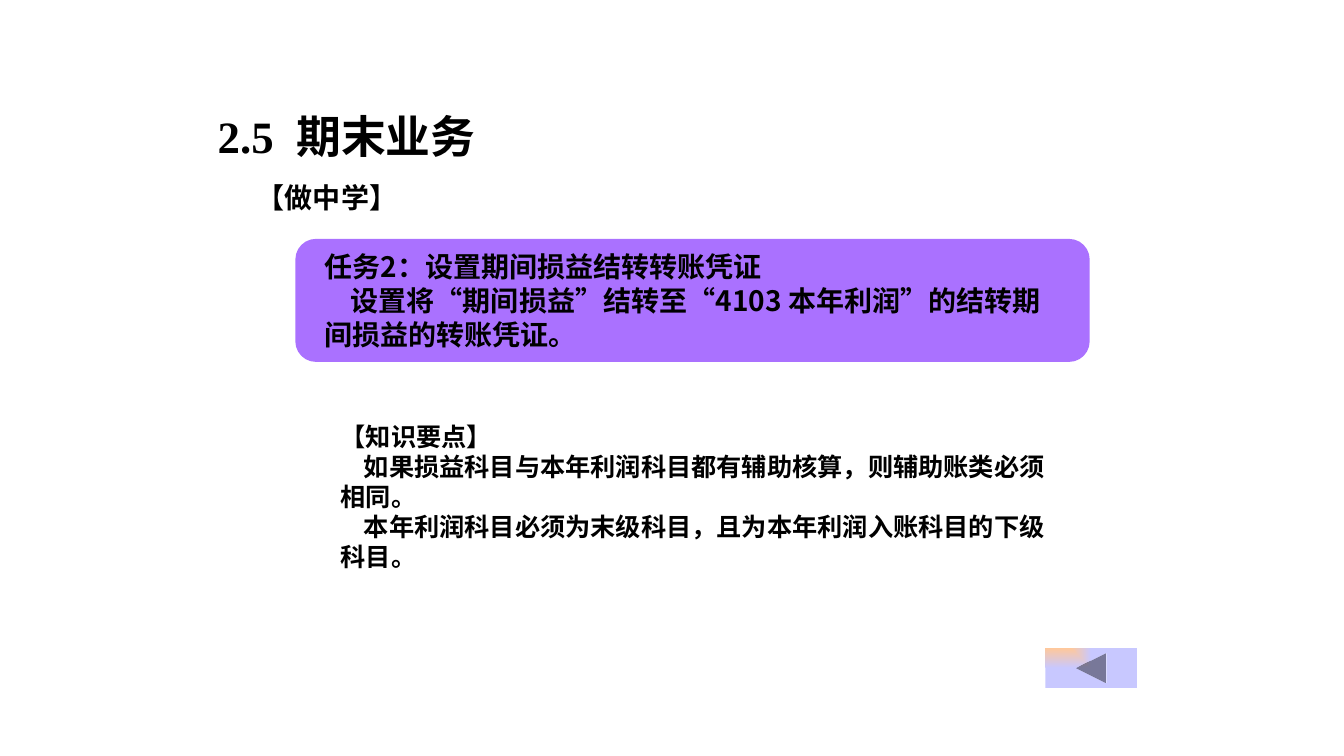
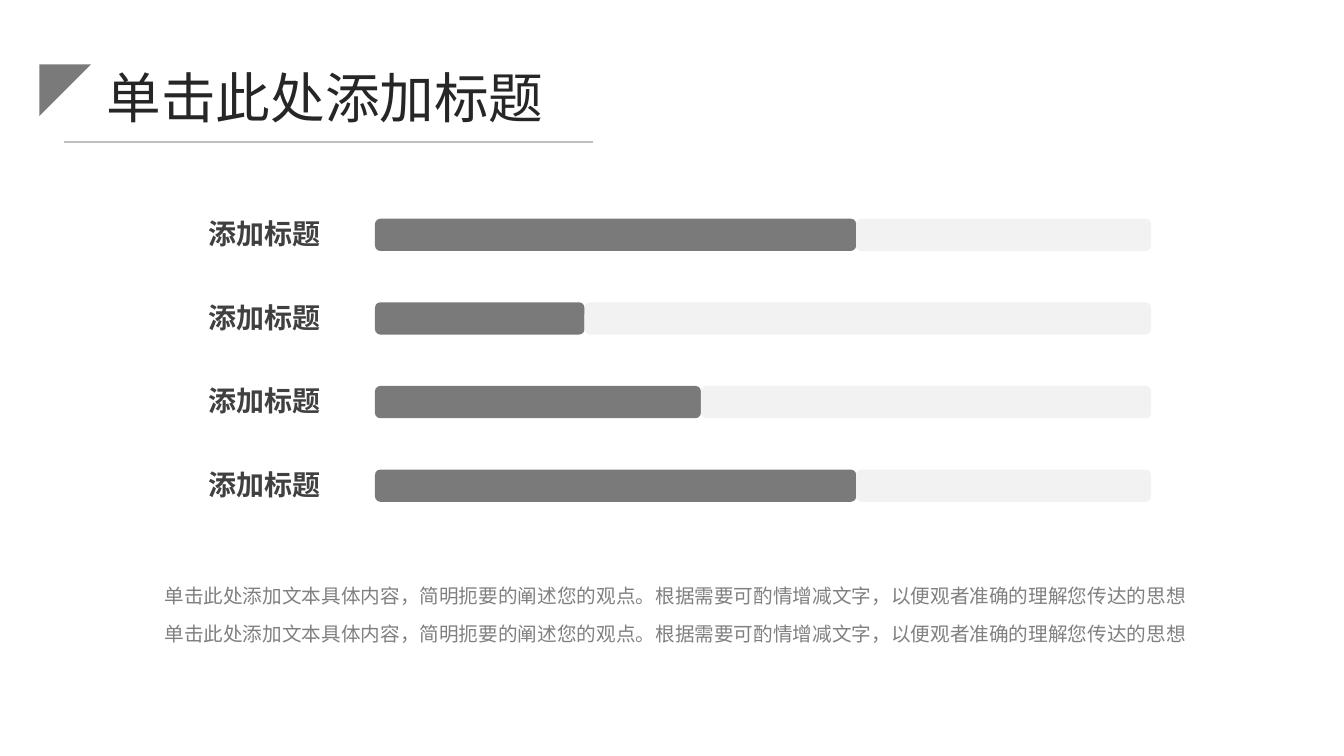
from lxml import etree
from pptx import Presentation
from pptx.dml.color import RGBColor
from pptx.enum.shapes import MSO_CONNECTOR, MSO_SHAPE
from pptx.enum.text import MSO_ANCHOR, MSO_AUTO_SIZE, PP_ALIGN
from pptx.oxml.ns import qn
from pptx.util import Inches, Pt

BLACK = RGBColor(0x00, 0x00, 0x00)
INK = RGBColor(0x26, 0x26, 0x26)
DARK = RGBColor(0x40, 0x40, 0x40)
GRAY = RGBColor(0x80, 0x80, 0x80)
STEEL = RGBColor(0x7A, 0x7A, 0x7A)
SILVER = RGBColor(0xBF, 0xBF, 0xBF)
PALE = RGBColor(0xF2, 0xF2, 0xF2)
PURPLE = RGBColor(0xAA, 0x71, 0xFF)
PEACH = RGBColor(0xFF, 0xC8, 0x9B)
LILAC = RGBColor(0xC8, 0xC8, 0xFF)
SANS = "Noto Sans CJK SC"
SERIF = "Times New Roman"

deck = Presentation()
deck.slide_width, deck.slide_height = Inches(13.33), Inches(7.5)
COL, ROW = deck.slide_width / 100, deck.slide_height / 100
layout = deck.slide_layouts[1]


def write(shape, box, lines, size, color, bold=False, font=SANS,
          align=PP_ALIGN.LEFT, anchor=MSO_ANCHOR.MIDDLE, pitch=None, indent=0):
    """Place a shape on the grid and fill it; lines after the first are indented."""
    left, top, width, height = box
    shape.left, shape.width = int(left * COL), int(width * COL)
    shape.top, shape.height = int(top * ROW), int(height * ROW)
    frame = shape.text_frame
    frame.word_wrap = True
    frame.auto_size = MSO_AUTO_SIZE.NONE
    frame.vertical_anchor = anchor
    frame.text = "\n".join(lines)
    for i, para in enumerate(frame.paragraphs):
        para.alignment = align
        para.space_before = para.space_after = Pt(0)
        if pitch:
            para.line_spacing = Pt(pitch)
        para.font.size, para.font.bold = Pt(size), bold
        para.font.name, para.font.color.rgb = font, color
        props = para._p.get_or_add_pPr()
        props.set("marL", "0")
        props.set("indent", str(Inches(indent) if i else 0))
        mark = etree.Element(qn("a:buNone"))
        base = props.find(qn("a:defRPr"))
        base.addprevious(mark)
        latin = base.find(qn("a:latin"))
        latin.addnext(etree.Element(qn("a:ea"), typeface=SANS))


def block(slide, kind, box, color):
    """Add a flat shape on the grid."""
    left, top, width, height = box
    shape = slide.shapes.add_shape(kind, int(left * COL), int(top * ROW),
                                   int(width * COL), int(height * ROW))
    shape.shadow.inherit = False
    shape.fill.solid()
    shape.fill.fore_color.rgb = color
    shape.line.fill.background()
    return shape


# Task slide
task = deck.slides.add_slide(layout)
write(task.shapes.title, (15.45, 13.73, 66.75, 8.53), ["2.5  期末业务"],
      32, BLACK, True, SERIF)
label = task.shapes.add_textbox(0, 0, 0, 0)
write(label, (18.38, 23.2, 14, 5.87), ["【做中学】"], 20, BLACK, True, SERIF)

box = (21.98, 31.6, 59.1, 16.27)
card = block(task, MSO_SHAPE.ROUNDED_RECTANGLE, box, PURPLE)
write(card, box,
      ["任务2：设置期间损益结转转账凭证",
       "设置将“期间损益”结转至“4103 本年利润”的结转期间损益的转账凭证。"],
      20, BLACK, True, pitch=24, indent=0.26)
card.text_frame.margin_left = Inches(0.23)
card.text_frame.margin_right = Inches(0.29)

write(task.placeholders[1], (24.6, 55.07, 54.9, 21.47),
      ["【知识要点】",
       "如果损益科目与本年利润科目都有辅助核算，则辅助账类必须相同。",
       "本年利润科目必须为末级科目，且为本年利润入账科目的下级科目。"],
      18, BLACK, True, anchor=MSO_ANCHOR.TOP, pitch=21.5, indent=0.23)

back = block(task, MSO_SHAPE.ACTION_BUTTON_BACK_OR_PREVIOUS,
             (77.78, 85.73, 6.82, 5.33), LILAC)
back.fill.gradient()
for stop, color in zip(back.fill.gradient_stops, (PEACH, LILAC)):
    stop.color.rgb = color
grad = back._element.spPr.find(qn("a:gradFill"))
grad.remove(grad.find(qn("a:lin")))
sweep = etree.SubElement(grad, qn("a:path"), {"path": "rect"})
etree.SubElement(sweep, qn("a:fillToRect"), r="100000", b="100000")

# Progress slide
bars = deck.slides.add_slide(layout)
write(bars.shapes.title, (2.93, 7.6, 42.53, 10.27), ["单击此处添加标题"],
      39, INK, align=PP_ALIGN.CENTER)
wedge = block(bars, MSO_SHAPE.RIGHT_TRIANGLE, (2.93, 8.53, 3.83, 6.8), STEEL)
wedge.rotation = 90
rule = bars.shapes.add_connector(
    MSO_CONNECTOR.STRAIGHT, int(4.73 * COL), int(18.8 * ROW),
    int(44.1 * COL), int(18.8 * ROW))
rule.line.color.rgb, rule.line.width = SILVER, Pt(1)
etree.SubElement(rule._element.spPr, qn("a:effectLst"))

LEFT, SPAN, STEP = 27.9, 57.75, 11.06
for i, share in enumerate((0.62, 0.27, 0.42, 0.62)):
    name = bars.shapes.add_textbox(0, 0, 0, 0)
    write(name, (11.55, 26.93 + i * STEP, 16.2, 7.87), ["添加标题"],
          20, DARK, True, align=PP_ALIGN.CENTER)
    top, done = 28.93 + i * STEP, share * SPAN
    for left, width, color in ((LEFT, done, STEEL),
                               (LEFT + done, SPAN - done, PALE)):
        block(bars, MSO_SHAPE.ROUNDED_RECTANGLE, (left, top, width, 4.27), color)

note = "单击此处添加文本具体内容，简明扼要的阐述您的观点。根据需要可酌情增减文字，以便观者准确的理解您传达的思想"
write(bars.placeholders[1], (11.48, 74.67, 77.7, 12.27), [note] * 2,
      14, GRAY, anchor=MSO_ANCHOR.TOP, pitch=27)

deck.save("out.pptx")
